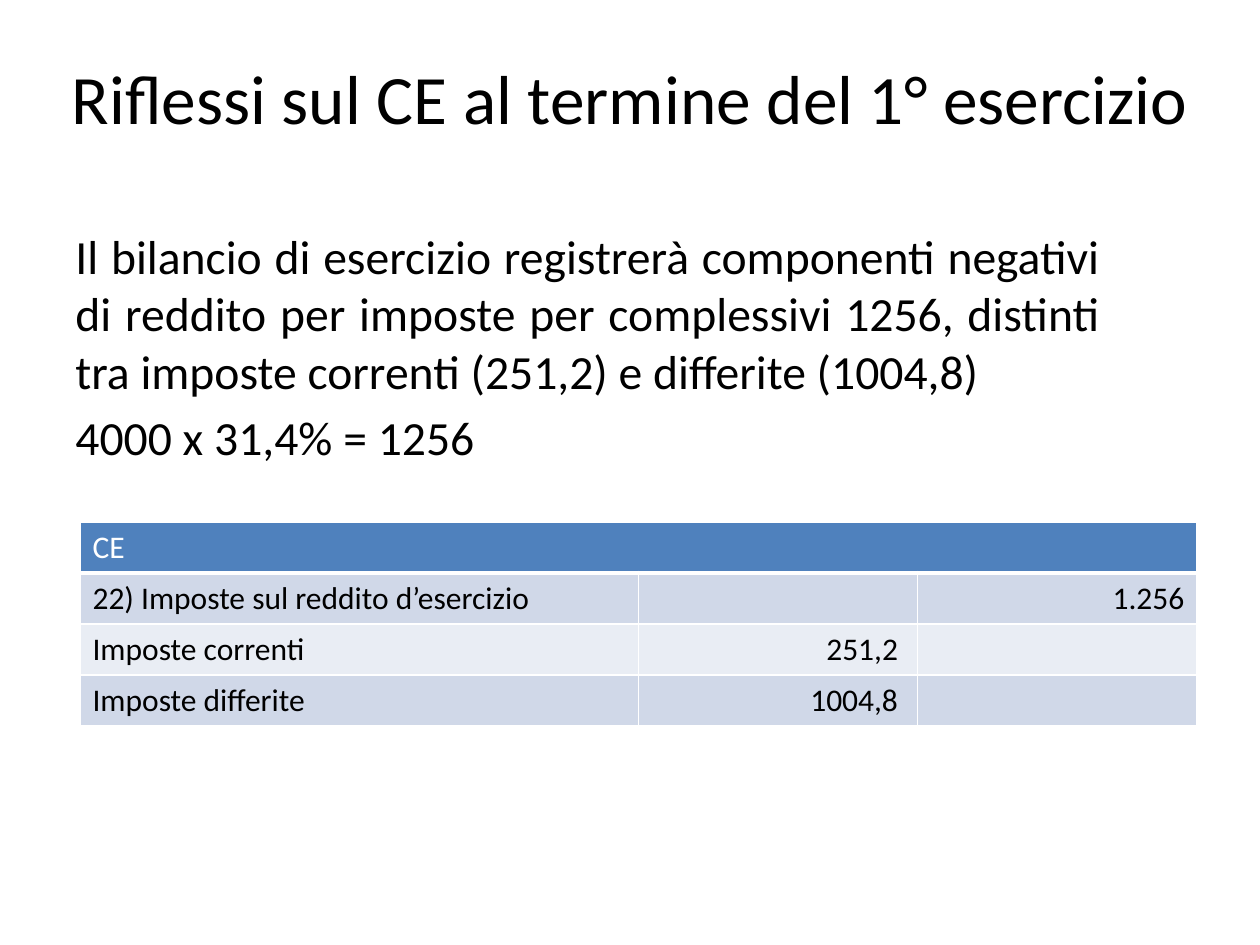
import pptx
import pptx.dml.color
import pptx.enum.text
import pptx.oxml
import pptx.oxml.ns
import pptx.util

EMU_PER_PX = 914400 / 126
BLACK = pptx.dml.color.RGBColor(0x00, 0x00, 0x00)
WHITE = pptx.dml.color.RGBColor(0xFF, 0xFF, 0xFF)
HEADER_BLUE = pptx.dml.color.RGBColor(0x4F, 0x81, 0xBD)
BAND_DARK = pptx.dml.color.RGBColor(0xD0, 0xD8, 0xE8)
BAND_LIGHT = pptx.dml.color.RGBColor(0xE9, 0xED, 0xF4)
ALIGN = pptx.enum.text.PP_ALIGN
ANCHOR = pptx.enum.text.MSO_ANCHOR

TITLE = "Riflessi sul CE al termine del 1° esercizio"
STATEMENT = (
    "Il bilancio di esercizio registrerà componenti negativi di reddito per "
    "imposte per complessivi 1256, distinti tra imposte correnti (251,2) e "
    "differite (1004,8) "
)
CALCULATION = "4000 x 31,4% = 1256"
TABLE_ROWS = [
    ("CE", "", ""),
    ("22) Imposte sul reddito d’esercizio", "", "1.256"),
    ("Imposte correnti", "251,2 ", ""),
    ("Imposte differite", "1004,8 ", ""),
]


def px(length):
    return pptx.util.Emu(round(length * EMU_PER_PX))


def write_text(paragraph, text, size=18, color=BLACK, align=ALIGN.LEFT, space_before=None):
    paragraph.alignment = align
    if space_before is not None:
        paragraph.space_before = pptx.util.Pt(space_before)
    run = paragraph.add_run()
    run.text = text
    run.font.name = "Calibri"
    run.font.size = pptx.util.Pt(size)
    run.font.color.rgb = color


def add_text_frame(slide, box, anchor):
    frame = slide.shapes.add_textbox(*map(px, box)).text_frame
    frame.word_wrap = True
    frame.vertical_anchor = anchor
    return frame


def set_borders(cell, bottom_width):
    properties = cell._tc.get_or_add_tcPr()
    for side, width in (("lnL", 1), ("lnR", 1), ("lnT", 1), ("lnB", bottom_width)):
        properties.append(pptx.oxml.parse_xml(
            f'<a:{side} {pptx.oxml.ns.nsdecls("a")} w="{pptx.util.Pt(width)}">'
            f'<a:solidFill><a:srgbClr val="{WHITE}"/></a:solidFill></a:{side}>'
        ))


def add_title(slide, box):
    frame = add_text_frame(slide, box, ANCHOR.MIDDLE)
    write_text(frame.paragraphs[0], TITLE, size=39.6, align=ALIGN.CENTER)


def add_body(slide, box):
    frame = add_text_frame(slide, box, ANCHOR.TOP)
    write_text(frame.paragraphs[0], STATEMENT, size=27.2, align=ALIGN.JUSTIFY)
    write_text(frame.add_paragraph(), CALCULATION, size=27.2, space_before=5.4)


def add_tax_table(slide, box):
    left, top, width, height = box
    table = slide.shapes.add_table(len(TABLE_ROWS), 3, *map(px, box)).table
    # The label column takes half the width, the amounts a quarter each
    for column, share in zip(table.columns, (2, 1, 1)):
        column.width = px(width * share / 4)
    for row in table.rows:
        row.height = px(height / len(TABLE_ROWS))

    for row_index, texts in enumerate(TABLE_ROWS):
        is_header = row_index == 0
        band = BAND_DARK if row_index % 2 else BAND_LIGHT
        for column_index, text in enumerate(texts):
            cell = table.cell(row_index, column_index)
            set_borders(cell, 3 if is_header else 1)
            cell.fill.solid()
            cell.fill.fore_color.rgb = HEADER_BLUE if is_header else band
            if text:
                write_text(
                    cell.text_frame.paragraphs[0], text,
                    color=WHITE if is_header else BLACK,
                    align=ALIGN.RIGHT if column_index else ALIGN.LEFT,
                )
    table.cell(0, 0).merge(table.cell(0, 2))


def main():
    presentation = pptx.Presentation()
    presentation.slide_width = px(1260)
    presentation.slide_height = px(945)
    slide = presentation.slides.add_slide(presentation.slide_layouts[6])
    add_title(slide, (0, 38, 1260, 117))
    add_body(slide, (63, 221, 1050, 215))
    add_tax_table(slide, (80, 522, 1117, 204))
    presentation.save("out.pptx")


if __name__ == "__main__":
    main()
